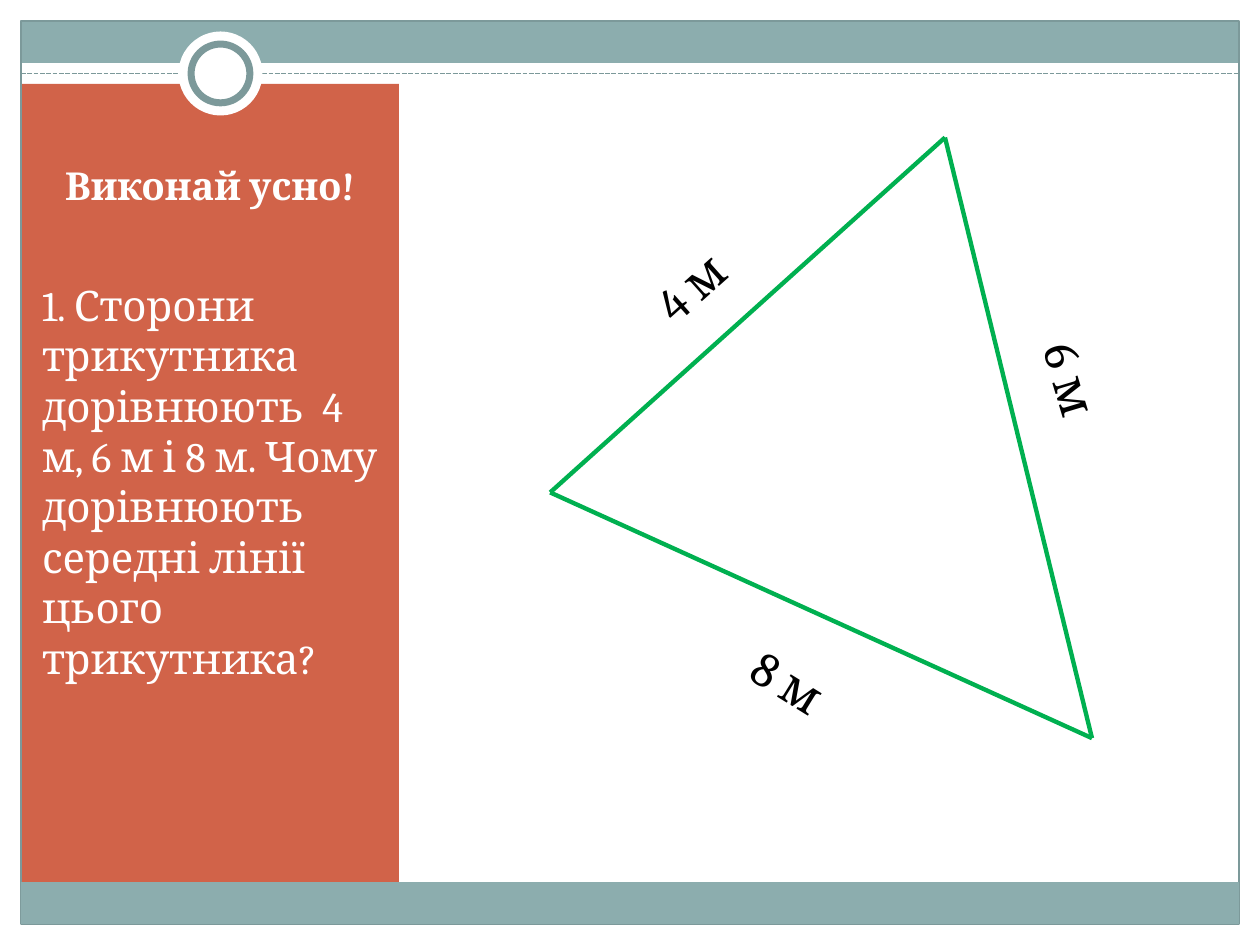
"""Build a slide with an oral exercise about the midlines of a triangle."""
from dataclasses import dataclass

from lxml.etree import SubElement
from pptx import Presentation
from pptx.dml.color import RGBColor as RGB
from pptx.enum.dml import MSO_LINE as Dash
from pptx.enum.shapes import MSO_CONNECTOR as Conn, MSO_SHAPE as Shape
from pptx.enum.text import MSO_ANCHOR as Anchor, MSO_AUTO_SIZE as Auto, PP_ALIGN as Align
from pptx.oxml.ns import qn
from pptx.util import Inches, Pt


@dataclass(frozen=True)
class Theme:
    font: str = "Cambria"
    band: RGB = RGB.from_string("8CADAE")
    edge: RGB = RGB.from_string("7C999A")
    panel: RGB = RGB.from_string("D16349")
    side: RGB = RGB.from_string("00B050")
    white: RGB = RGB.from_string("FFFFFF")
    black: RGB = RGB.from_string("000000")
    title: int = 22
    body: int = 24
    label: int = 28


theme = Theme()
prs = Presentation()
prs.slide_width, prs.slide_height = Inches(10), Inches(7.5)
COLS = 60
cell = prs.slide_width / COLS
s = prs.slides.add_slide(prs.slide_layouts[1])


def grid(*cells):
    return [round(n * cell) for n in cells]


def write(sp, text, size, color, bold=False):
    tf = sp.text_frame
    tf.word_wrap = True
    tf.text = text
    p = tf.paragraphs[0]
    p.alignment = Align.LEFT
    p.font.name, p.font.size, p.font.bold = theme.font, Pt(size), bold
    p.font.color.rgb = color
    return tf, p


frame = [
    (Shape.RECTANGLE, (1, 1, 58, 2), theme.band, None),
    (Shape.RECTANGLE, (1, 4, 18, 38.5), theme.panel, None),
    (Shape.RECTANGLE, (1, 1, 58, 43), None, 0.75),
    ("line", (1, 3.5, 59, 3.5), theme.edge, 0.9),
    (Shape.OVAL, (8.5, 1.5, 4, 4), theme.white, None),
    (Shape.OVAL, (9.1, 2.1, 2.8, 2.8), theme.white, 4),
    (Shape.RECTANGLE, (1, 42, 58, 2), theme.band, None),
]
vertices = [(26.2, 23.45), (45, 6.55), (52, 35.15)]
sides = [
    ("line", a + b, theme.side, 2.5)
    for a, b in zip(vertices, vertices[1:] + vertices[:1])
]

for kind, box, color, width in frame + sides:
    if kind == "line":
        sp = s.shapes.add_connector(Conn.STRAIGHT, *grid(*box))
        sp.line.color.rgb, sp.line.width = color, Pt(width)
        if color == theme.edge:
            sp.line.dash_style = Dash.SQUARE_DOT
        SubElement(sp.element.spPr, qn("a:effectLst"))
        continue
    sp = s.shapes.add_shape(kind, *grid(*box))
    sp.shadow.inherit = False
    if color is None:
        sp.fill.background()
    else:
        sp.fill.solid()
        sp.fill.fore_color.rgb = color
    if width is None:
        sp.line.fill.background()
    else:
        sp.line.color.rgb, sp.line.width = theme.edge, Pt(width)

title, body = s.shapes.title, s.placeholders[1]
for sp, box in [(title, (2.5, 6, 16.6, 4.2)), (body, (1.4, 13, 17.35, 27.2))]:
    sp.left, sp.top, sp.width, sp.height = grid(*box)
    sp.element.getparent().append(sp.element)

tf, p = write(title, "Виконай усно!", theme.title, theme.white, bold=True)
tf.vertical_anchor, tf.auto_size = Anchor.BOTTOM, Auto.NONE

question = (
    "1. Сторони трикутника дорівнюють  4 м, 6 м і 8 м. "
    "Чому дорівнюють середні лінії цього трикутника?"
)
tf, p = write(body, question, theme.body, theme.white)
tf.auto_size = Auto.NONE
p.space_after = Pt(10)
pPr = body.element.find(".//" + qn("a:pPr"))
pPr.set("marL", "0")
pPr.set("indent", "0")
pPr.find(qn("a:defRPr")).addprevious(pPr.makeelement(qn("a:buNone")))

for text, left, top, angle in [
    ("4 м", 30.35, 11.45, 318.2),
    ("6 м", 48.2, 17.05, 73.3),
    ("8 м", 35.1, 31.1, 31.7),
]:
    sp = s.shapes.add_textbox(*grid(left, top, 6.1, 3.4))
    sp.rotation = angle
    tf, p = write(sp, text, theme.label, theme.black)
    tf.auto_size = Auto.SHAPE_TO_FIT_TEXT

prs.save("out.pptx")
